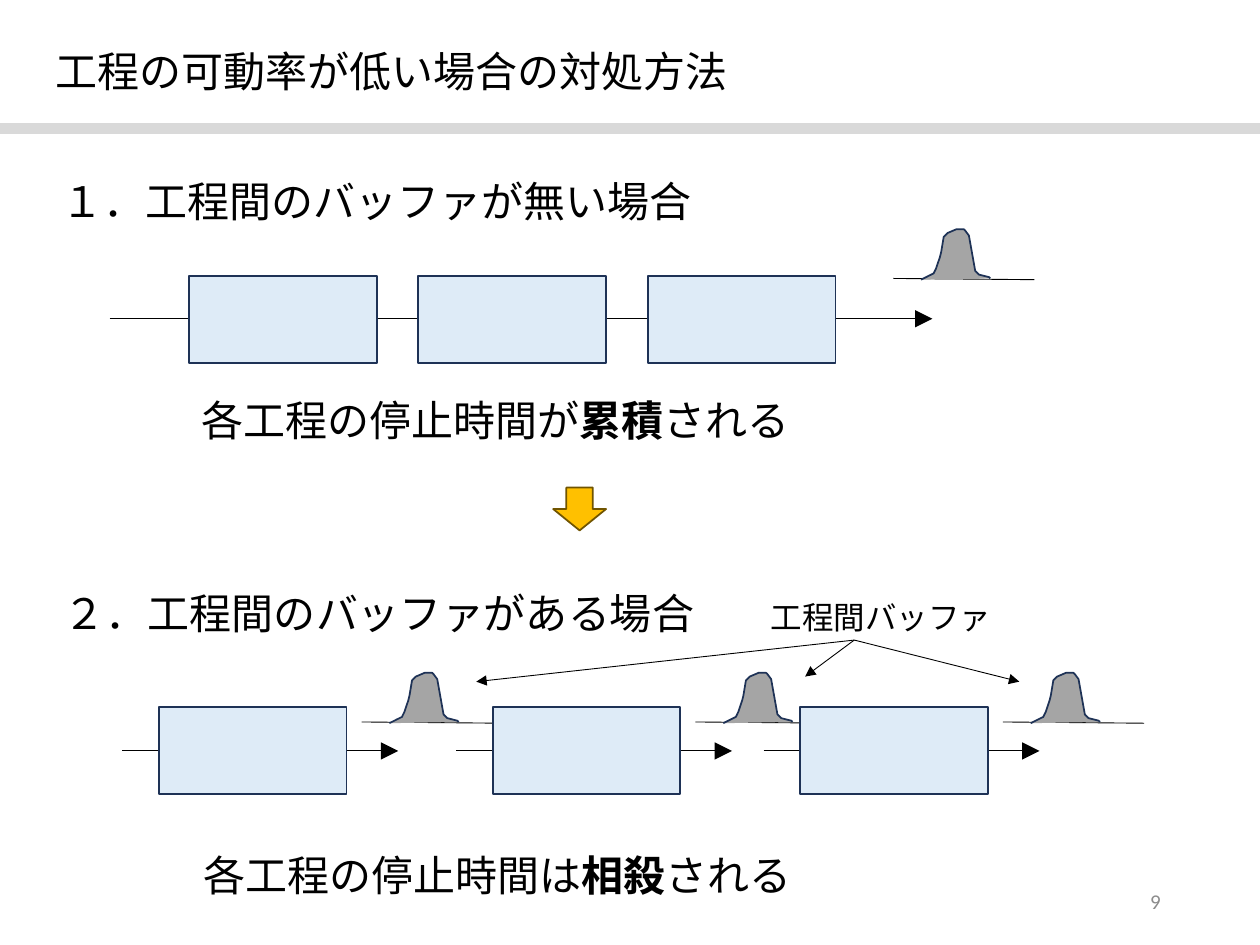
"""Build a slide comparing process lines without and with buffers."""
from dataclasses import dataclass

from lxml import etree
from pptx import Presentation
from pptx.dml.color import RGBColor
from pptx.enum.shapes import MSO_CONNECTOR, MSO_SHAPE
from pptx.enum.text import MSO_ANCHOR, PP_ALIGN
from pptx.oxml.ns import qn
from pptx.util import Inches, Pt

STRAIGHT = MSO_CONNECTOR.STRAIGHT
RECT, DOWN = MSO_SHAPE.RECTANGLE, MSO_SHAPE.DOWN_ARROW
LEFT, RIGHT = PP_ALIGN.LEFT, PP_ALIGN.RIGHT
TOP, MIDDLE = MSO_ANCHOR.TOP, MSO_ANCHOR.MIDDLE


@dataclass(frozen=True)
class Theme:
    font: str = "Calibri"
    ink: str = "000000"
    gray: str = "8C8C8C"
    rule: str = "D9D9D9"
    box: str = "DEEBF7"
    edge: str = "1E3256"
    hump: str = "A5A5A5"
    gold: str = "FFC000"
    rim: str = "705400"
    body: float = 24
    label: float = 18
    page: float = 12
    thin: float = 0.5
    line: float = 1
    band: float = 6


@dataclass(frozen=True)
class Area:
    x: float
    y: float
    w: float
    h: float


@dataclass(frozen=True)
class Note:
    area: Area
    words: tuple[str, ...]
    size: float
    color: str
    align: PP_ALIGN = LEFT
    anchor: MSO_ANCHOR = TOP


THEME = Theme()
BOX_W, BOX_H = 1.49, 0.69
HUMP = ((0, 40), (6, 37), (10, 35), (12, 31), (15, 22), (16, 18), (18, 6), (21, 3),
        (28, 0), (34, 0), (35, 1), (38, 5), (43, 33), (46, 36), (54, 38), (55, 39))


def body(x: float, y: float, w: float, *words: str) -> Note:
    """Return a note in the main text size; every second piece is bold."""
    return Note(Area(x, y, w, 0.5), words, THEME.body, THEME.ink)


NOTES = (
    body(0.34, 0.31, 6.68, "工程の可動率が低い場合の対処方法"),
    body(0.39, 1.34, 5.5, "１．工程間のバッファが無い場合"),
    body(1.5, 3.08, 5.45, "各工程の停止時間が", "累積", "される"),
    body(0.41, 4.61, 5.5, "２．工程間のバッファがある場合"),
    body(1.52, 6.69, 5.45, "各工程の停止時間は", "相殺", "される"),
    Note(Area(6.02, 4.7, 2.59, 0.4), ("工程間バッファ",), THEME.label, THEME.ink),
    Note(Area(7.06, 6.95, 2.25, 0.4), ("9",), THEME.page, THEME.gray, RIGHT, MIDDLE),
)


def write(shapes, note: Note) -> None:
    """Add a text box for the note."""
    area = note.area
    box = shapes.add_textbox(Inches(area.x), Inches(area.y), Inches(area.w), Inches(area.h))
    frame = box.text_frame
    frame.word_wrap = True
    frame.vertical_anchor = note.anchor
    para = frame.paragraphs[0]
    para.alignment = note.align
    for i, word in enumerate(note.words):
        run = para.add_run()
        run.text = word
        run.font.name = THEME.font
        run.font.size = Pt(note.size)
        run.font.bold = i % 2 == 1
        run.font.color.rgb = RGBColor.from_string(note.color)


def paint(shape, fill: str, edge: str) -> None:
    """Set the fill and outline of a shape."""
    shape.shadow.inherit = False
    shape.fill.solid()
    shape.fill.fore_color.rgb = RGBColor.from_string(fill)
    shape.line.color.rgb = RGBColor.from_string(edge)
    shape.line.width = Pt(THEME.line)


def block(shapes, kind: MSO_SHAPE, area: Area, fill: str, edge: str) -> None:
    """Add a painted preset shape."""
    shape = shapes.add_shape(kind, Inches(area.x), Inches(area.y), Inches(area.w), Inches(area.h))
    paint(shape, fill, edge)


def rule(shapes, start: tuple[float, float], end: tuple[float, float], head: str = "",
         color: str = THEME.ink, width: float = THEME.thin):
    """Add a straight line, with an arrowhead of the given size if any."""
    line = shapes.add_connector(STRAIGHT, *map(Inches, start + end))
    line.line.color.rgb = RGBColor.from_string(color)
    line.line.width = Pt(width)
    props = line._element.spPr
    if head:
        etree.SubElement(props.find(qn("a:ln")), qn("a:tailEnd"), type="triangle", w=head, len=head)
    etree.SubElement(props, qn("a:effectLst"))
    return line


def curve(shapes, x: float, y: float) -> None:
    """Add a stop-time curve grouped with its base line."""
    base = rule(shapes, (x, y), (x + 1.12, y + 0.01))
    form = shapes.build_freeform(*HUMP[0], scale=Inches(0.01))
    form.add_line_segments(HUMP[1:], close=False)
    hump = form.convert_to_shape(Inches(x + 0.22), Inches(y - 0.39))
    paint(hump, THEME.hump, THEME.edge)
    shapes.add_group_shape([base, hump])


def step(shapes, x: float, y: float) -> None:
    """Add a process box."""
    block(shapes, RECT, Area(x, y, BOX_W, BOX_H), THEME.box, THEME.edge)


def main() -> None:
    """Build and save the slide."""
    deck = Presentation()
    deck.slide_width, deck.slide_height = Inches(10), Inches(7.5)
    shapes = deck.slides.add_slide(deck.slide_layouts[6]).shapes

    rule(shapes, (0, 1.02), (10, 1.02), color=THEME.rule, width=THEME.band)
    rule(shapes, (0.87, 2.53), (7.4, 2.53), "lg")
    for i in range(3):
        step(shapes, 1.5 + 1.82 * i, 2.19)
    curve(shapes, 7.09, 2.21)
    block(shapes, DOWN, Area(4.39, 3.87, 0.42, 0.34), THEME.gold, THEME.rim)

    for x in (1.26, 3.91, 6.35):
        rule(shapes, (x - 0.29, 5.96), (x + 1.9, 5.96), "lg")
        step(shapes, x, 5.61)
        curve(shapes, x + 1.61, 5.73)
    for end in ((3.78, 5.41), (6.39, 5.37), (8.09, 5.41)):
        rule(shapes, (6.78, 5.08), end, "med")

    for note in NOTES:
        write(shapes, note)
    deck.save("out.pptx")


if __name__ == "__main__":
    main()
